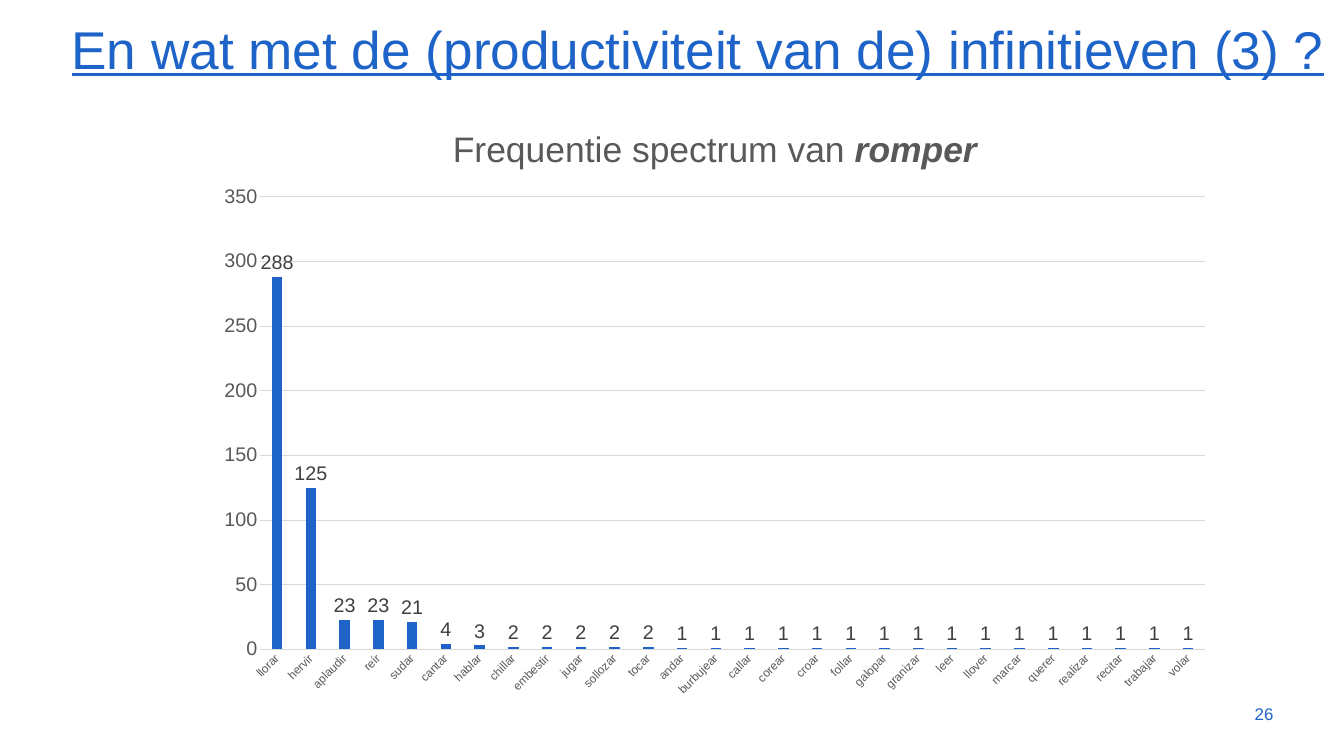
from pptx import Presentation
from pptx.chart.data import CategoryChartData
from pptx.dml.color import RGBColor
from pptx.enum.chart import XL_CHART_TYPE, XL_LABEL_POSITION, XL_TICK_MARK
from pptx.enum.text import MSO_ANCHOR, PP_ALIGN
from pptx.oxml import parse_xml
from pptx.oxml.ns import nsdecls, qn
from pptx.util import Inches, Pt

BLUE = RGBColor(0x1E, 0x64, 0xC8)
GREY = RGBColor(0x59, 0x59, 0x59)
DARK = RGBColor(0x40, 0x40, 0x40)
PALE = RGBColor(0xD9, 0xD9, 0xD9)
FONT = "Arial"

TITLE = "En wat met de (productiviteit van de) infinitieven (3) ?"
NUMBER = "26"
HEADING = [("Frequentie spectrum van ", False), ("romper", True)]
COUNTS = {
    "llorar": 288, "hervir": 125, "aplaudir": 23, "reír": 23, "sudar": 21,
    "cantar": 4, "hablar": 3,
}
COUNTS.update(dict.fromkeys("chillar embestir jugar sollozar tocar".split(), 2))
COUNTS.update(dict.fromkeys(
    "andar burbujear callar corear croar follar galopar granizar leer llover "
    "marcar querer realizar recitar trabajar volar".split(), 1))

# left, top, width, height in percent of the slide
TITLE_BOX = (4.8, 2.62, 95.99, 8.81)
NUMBER_BOX = (89.93, 91.75, 5.33, 5.34)
CHART_BOX = (15.19, 14.71, 76, 79.01)
# plot area as shares of the chart
PLOT_BOX = {"x": 0.055, "y": 0.143, "w": 0.925, "h": 0.758}

deck = Presentation()
deck.slide_width, deck.slide_height = Inches(18.96), Inches(10.67)
slide = deck.slides.add_slide(deck.slide_layouts[6])


def place(box):
    sides = (deck.slide_width, deck.slide_height) * 2
    return [int(side * share / 100) for side, share in zip(sides, box)]


def style(font, size, color):
    font.name, font.size = FONT, Pt(size)
    font.color.rgb = color


def add_text(box, text, size, align, anchor):
    frame = slide.shapes.add_textbox(*place(box)).text_frame
    frame.word_wrap = True
    frame.vertical_anchor = anchor
    para = frame.paragraphs[0]
    para.alignment = align
    run = para.add_run()
    run.text = text
    style(run.font, size, BLUE)
    return para, run


def set_plot(chart):
    """Fix the inner plot area at PLOT_BOX."""
    area = chart._chartSpace.chart.plotArea
    for old in area.findall(qn("c:layout")):
        area.remove(old)
    modes = "".join(f'<c:{key}Mode val="edge"/>' for key in "xy")
    sizes = "".join(f'<c:{key} val="{val}"/>' for key, val in PLOT_BOX.items())
    area.insert(0, parse_xml(
        f'<c:layout {nsdecls("c")}><c:manualLayout><c:layoutTarget val="inner"/>'
        f'{modes}{sizes}</c:manualLayout></c:layout>'))


def add_chart():
    data = CategoryChartData()
    data.categories = list(COUNTS)
    data.add_series("Series 1", list(COUNTS.values()))
    chart = slide.shapes.add_chart(
        XL_CHART_TYPE.COLUMN_CLUSTERED, *place(CHART_BOX), data).chart
    chart.has_legend = False
    style(chart.font, 10, GREY)

    chart.has_title = True
    chart.chart_title.include_in_layout = False
    para = chart.chart_title.text_frame.paragraphs[0]
    for text, strong in HEADING:
        run = para.add_run()
        run.text = text
        style(run.font, 36, GREY)
        run.font.bold = run.font.italic = strong

    cats, vals = chart.category_axis, chart.value_axis
    for axis, size in ((cats, 12), (vals, 20)):
        axis.major_tick_mark = axis.minor_tick_mark = XL_TICK_MARK.NONE
        style(axis.tick_labels.font, size, GREY)
    cats._element.txPr.bodyPr.set("rot", "-2700000")
    vals.minimum_scale, vals.maximum_scale, vals.major_unit = 0, 350, 50
    vals.format.line.fill.background()
    vals.has_major_gridlines = True
    for line in (cats.format.line, vals.major_gridlines.format.line):
        line.color.rgb = PALE
        line.width = Pt(0.75)

    plot = chart.plots[0]
    plot.vary_by_categories = False
    plot.gap_width, plot.overlap = 219, -27
    bars = plot.series[0]
    bars.format.fill.solid()
    bars.format.fill.fore_color.rgb = BLUE
    labels = bars.data_labels
    labels.show_value = True
    labels.position = XL_LABEL_POSITION.OUTSIDE_END
    style(labels.font, 20, DARK)
    set_plot(chart)


para, run = add_text(TITLE_BOX, TITLE, 54, PP_ALIGN.LEFT, MSO_ANCHOR.TOP)
para.line_spacing = 0.9
run.font.underline = True
add_text(NUMBER_BOX, NUMBER, 17.1, PP_ALIGN.RIGHT, MSO_ANCHOR.MIDDLE)
add_chart()
deck.save("out.pptx")
